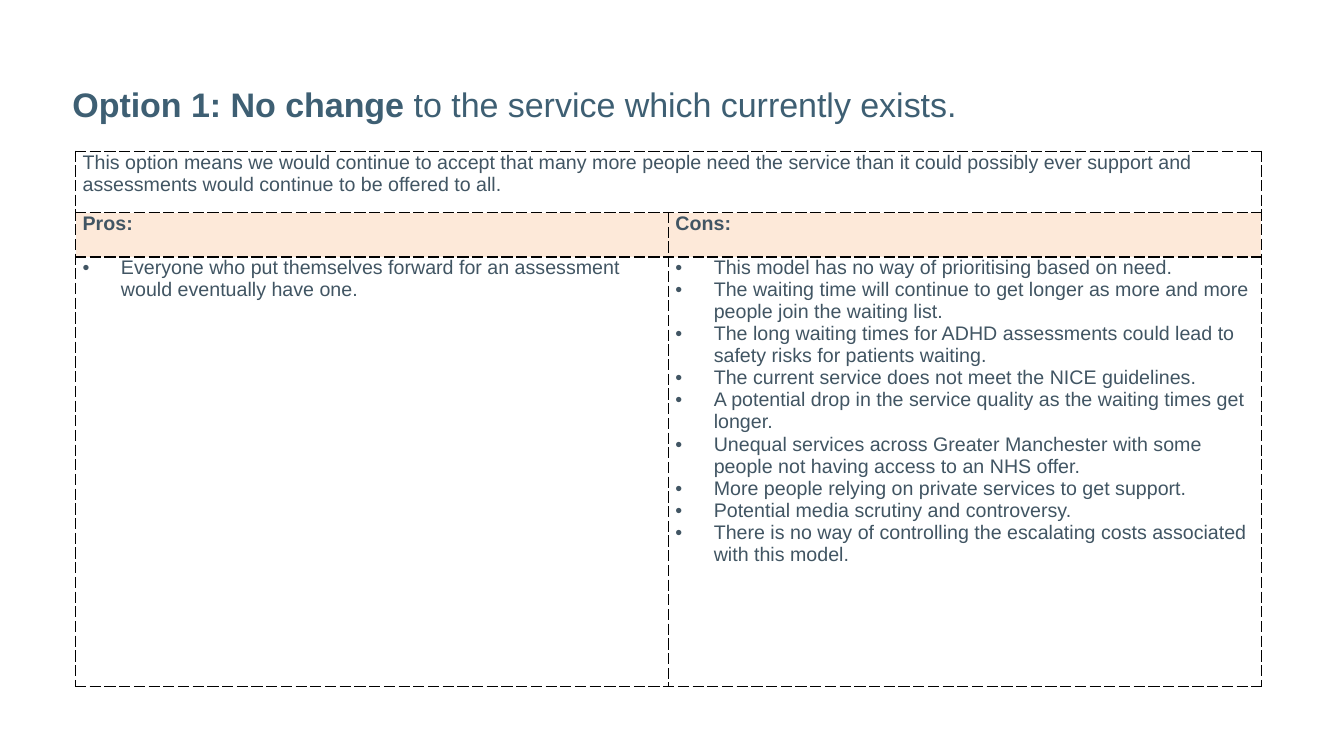
from dataclasses import dataclass

from lxml.etree import SubElement
from pptx import Presentation
from pptx.dml.color import RGBColor
from pptx.enum.text import MSO_ANCHOR
from pptx.oxml.ns import qn
from pptx.slide import Slide
from pptx.table import Table, _Cell
from pptx.text.text import _Paragraph
from pptx.util import Emu, Pt

FONT = "Arial"
TITLE = RGBColor(0x3E, 0x5F, 0x73)
BODY = RGBColor(0x41, 0x55, 0x63)
LINE = RGBColor(0x00, 0x00, 0x00)
PEACH = RGBColor(0xFD, 0xE9, 0xD9)
WHITE = RGBColor(0xFF, 0xFF, 0xFF)

COLS = (588, 588)
ROWS = (61, 44, 426)


@dataclass(frozen=True)
class Entry:
    row: int
    col: int
    lines: tuple[str, ...]
    fill: RGBColor = WHITE
    bold: bool = False
    listed: bool = False


ENTRIES = (
    Entry(0, 0, (
        "This option means we would continue to accept that many more people need "
        "the service than it could possibly ever support and assessments would "
        "continue to be offered to all.",
    )),
    Entry(1, 0, ("Pros:",), PEACH, bold=True),
    Entry(1, 1, ("Cons:",), PEACH, bold=True),
    Entry(2, 0, (
        "Everyone who put themselves forward for an assessment would eventually have one.",
    ), listed=True),
    Entry(2, 1, (
        "This model has no way of prioritising based on need.",
        "The waiting time will continue to get longer as more and more people join the waiting list.",
        "The long waiting times for ADHD assessments could lead to safety risks for patients waiting.",
        "The current service does not meet the NICE guidelines.",
        "A potential drop in the service quality as the waiting times get longer.",
        "Unequal services across Greater Manchester with some people not having access to an NHS offer.",
        "More people relying on private services to get support.",
        "Potential media scrutiny and controversy.",
        "There is no way of controlling the escalating costs associated with this model.",
    ), listed=True),
)


def px(size: int) -> Emu:
    return Emu(size * 9144)


def style(para: _Paragraph, size: float, color: RGBColor) -> None:
    for run in para.runs:
        run.font.name = FONT
        run.font.size = Pt(size)
        run.font.color.rgb = color


def bullet(para: _Paragraph) -> None:
    props = para._p.get_or_add_pPr()
    props.set("marL", str(px(38)))
    props.set("indent", str(px(-38)))
    SubElement(props, qn("a:buFont"), typeface=FONT)
    SubElement(props, qn("a:buChar"), char="•")


def border(cell: _Cell) -> None:
    props = cell._tc.get_or_add_tcPr()
    for side in ("lnL", "lnR", "lnT", "lnB"):
        line = SubElement(props, qn(f"a:{side}"), w=str(Pt(1)))
        fill = SubElement(line, qn("a:solidFill"))
        SubElement(fill, qn("a:srgbClr"), val=str(LINE))
        SubElement(line, qn("a:prstDash"), val="dash")


def fill_cell(table: Table, entry: Entry) -> None:
    cell = table.cell(entry.row, entry.col)
    cell.fill.solid()
    cell.fill.fore_color.rgb = entry.fill
    cell.text_frame.text = "\n".join(entry.lines)
    for para in cell.text_frame.paragraphs:
        if entry.listed:
            bullet(para)
        style(para, 14, BODY)
        for run in para.runs:
            run.font.bold = entry.bold


def add_title(slide: Slide) -> None:
    box = slide.shapes.add_textbox(px(62), px(87), px(944), px(63))
    frame = box.text_frame
    frame.word_wrap = True
    frame.vertical_anchor = MSO_ANCHOR.TOP
    frame.margin_top = frame.margin_bottom = 0
    para = frame.paragraphs[0]
    para.line_spacing = 0.9
    for text, bold in (
        ("Option 1: No change", True),
        (" to the service which currently exists.", False),
    ):
        run = para.add_run()
        run.text = text
        run.font.bold = bold
    style(para, 24.3, TITLE)


def add_grid(slide: Slide) -> None:
    frame = slide.shapes.add_table(
        len(ROWS), len(COLS), px(75), px(150), px(sum(COLS)), px(sum(ROWS))
    )
    table = frame.table
    table.first_row = table.horz_banding = False
    for col, width in zip(table.columns, COLS):
        col.width = px(width)
    for row, height in zip(table.rows, ROWS):
        row.height = px(height)
    for cell in table.iter_cells():
        cell.margin_left = cell.margin_right = px(7)
        cell.margin_top = cell.margin_bottom = 0
        border(cell)
    table.cell(0, 0).merge(table.cell(0, 1))
    for entry in ENTRIES:
        fill_cell(table, entry)


def main() -> None:
    deck = Presentation()
    deck.slide_width = px(1333)
    deck.slide_height = px(750)
    slide = deck.slides.add_slide(deck.slide_layouts[6])
    add_title(slide)
    add_grid(slide)
    deck.save("out.pptx")


if __name__ == "__main__":
    main()
